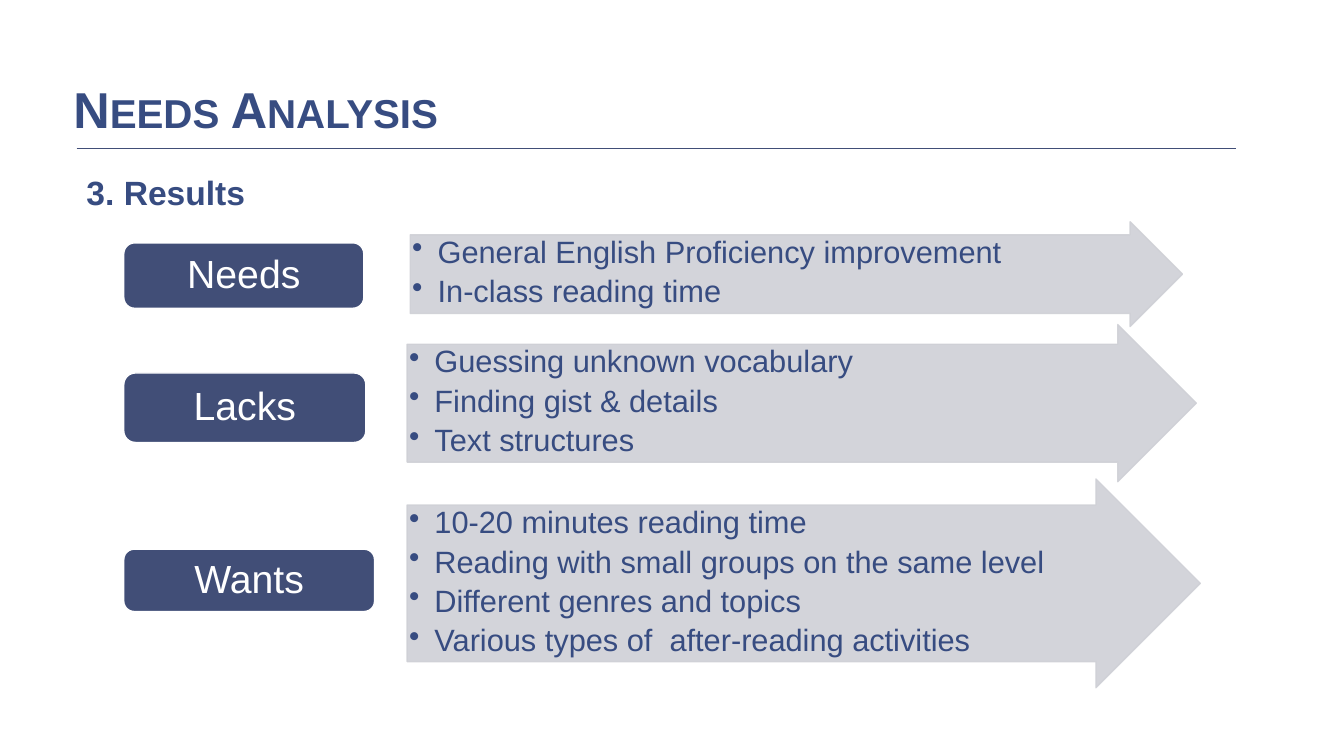
"""Build the Needs Analysis results slide."""
from pptx import Presentation
from pptx import util as u
from pptx.dml.color import RGBColor
from pptx.enum import shapes, text
from pptx.oxml import ns, xmlchemy

TITLE = "Needs Analysis"
HEAD = "3. Results"
ROWS = [
    {"name": "Needs", "pill": (3.12, 6.12, 6.05, 1.65),
     "arrow": (10.34, 5.59, 19.46, 2.64),
     "items": ["General English Proficiency improvement",
               "In-class reading time"]},
    {"name": "Lacks", "pill": (3.12, 9.4, 6.1, 1.75),
     "arrow": (10.26, 8.18, 19.89, 3.96),
     "items": ["Guessing unknown vocabulary", "Finding gist & details",
               "Text structures"]},
    {"name": "Wants", "pill": (3.12, 13.84, 6.32, 1.57),
     "arrow": (10.26, 12.07, 19.99, 5.26),
     "items": ["10-20 minutes reading time",
               "Reading with small groups on the same level",
               "Different genres and topics",
               "Various types of  after-reading activities"]},
]

BLUE = RGBColor(0x37, 0x4C, 0x81)
NAVY = RGBColor(0x41, 0x4E, 0x77)
GREY = RGBColor(0xCF, 0xD0, 0xD6)
WHITE = RGBColor(0xFF, 0xFF, 0xFF)
LEFT, MID = text.PP_ALIGN.LEFT, text.PP_ALIGN.CENTER
TOP, BASE = text.MSO_ANCHOR.TOP, text.MSO_ANCHOR.BOTTOM
KIND = shapes.MSO_SHAPE

LOOKS = {
    "title": {"size": 36, "color": BLUE, "bold": True, "pad": (0.33, 0.18),
              "anchor": BASE,
              "para": {"alignment": LEFT, "line_spacing": 0.85}},
    "head": {"size": 24, "color": BLUE, "bold": True, "pad": (0.25, 0.13),
             "anchor": TOP, "para": {"alignment": LEFT}},
    "pill": {"size": 28, "color": WHITE, "bold": False, "pad": (0.3, 0.15),
             "anchor": text.MSO_ANCHOR.MIDDLE,
             "para": {"alignment": MID, "line_spacing": 0.9}},
    "list": {"size": 22, "color": BLUE, "bold": False, "pad": (0.05, 0.05),
             "anchor": TOP,
             "para": {"alignment": LEFT, "line_spacing": 0.9,
                      "space_after": u.Pt(4.4)}},
}


def cms(box):
    return [u.Cm(n) for n in box]


def bullet(para):
    props = para._p.get_or_add_pPr()
    dent = u.Cm(0.64)
    props.set("marL", str(dent))
    props.set("indent", str(-dent))
    mark = xmlchemy.OxmlElement("a:buChar")
    mark.set("char", "•")
    props.append(mark)


def write(shape, lines, look, dots=False):
    frame = shape.text_frame
    wide, high = cms(look["pad"])
    form = {"word_wrap": True, "auto_size": text.MSO_AUTO_SIZE.NONE,
            "vertical_anchor": look["anchor"],
            "margin_left": wide, "margin_right": wide,
            "margin_top": high, "margin_bottom": high}
    for key, val in form.items():
        setattr(frame, key, val)
    for i, line in enumerate(lines):
        para = frame.add_paragraph() if i else frame.paragraphs[0]
        if dots:
            bullet(para)
        for key, val in look["para"].items():
            setattr(para, key, val)
        run = para.add_run()
        run.text = line
        font = {"name": "Arial", "size": u.Pt(look["size"]),
                "bold": look["bold"]}
        for key, val in font.items():
            setattr(run.font, key, val)
        run.font.color.rgb = look["color"]


def block(slide, kind, box, fill, edge):
    shape = slide.shapes.add_shape(kind, *cms(box))
    shape.shadow.inherit = False
    shape.fill.solid()
    shape.fill.fore_color.rgb = fill
    shape.line.color.rgb = edge
    shape.line.width = u.Pt(1)
    return shape


def sheer(shape, share):
    for color in shape._element.spPr.iter(ns.qn("a:srgbClr")):
        alpha = xmlchemy.OxmlElement("a:alpha")
        alpha.set("val", str(share * 1000))
        color.append(alpha)


def main():
    deck = Presentation()
    deck.slide_width, deck.slide_height = cms((33.87, 19.05))
    slide = deck.slides.add_slide(deck.slide_layouts[5])

    title = slide.shapes.title
    spot = zip(("left", "top", "width", "height"),
               cms((1.52, 1.12, 27.2, 2.57)))
    for key, val in spot:
        setattr(title, key, val)
    write(title, [TITLE], LOOKS["title"])
    run = title.text_frame.paragraphs[0].runs[0]
    run._r.get_or_add_rPr().set("cap", "small")

    head = slide.shapes.add_textbox(*cms((1.93, 4.19, 30.81, 1.27)))
    write(head, [HEAD], LOOKS["head"])

    rule = slide.shapes.add_connector(shapes.MSO_CONNECTOR.STRAIGHT,
                                      *cms((1.93, 3.73, 31.14, 3.73)))
    rule.line.color.rgb = NAVY
    rule.line.width = u.Pt(0.5)
    rule._element.spPr.append(xmlchemy.OxmlElement("a:effectLst"))

    for row in ROWS:
        arrow = block(slide, KIND.RIGHT_ARROW, row["arrow"], GREY, GREY)
        arrow.adjustments[0] = 0.75
        sheer(arrow, 90)
        write(arrow, row["items"], LOOKS["list"], dots=True)
        pill = block(slide, KIND.ROUNDED_RECTANGLE, row["pill"], NAVY, WHITE)
        write(pill, [row["name"]], LOOKS["pill"])

    deck.save("out.pptx")


if __name__ == "__main__":
    main()
